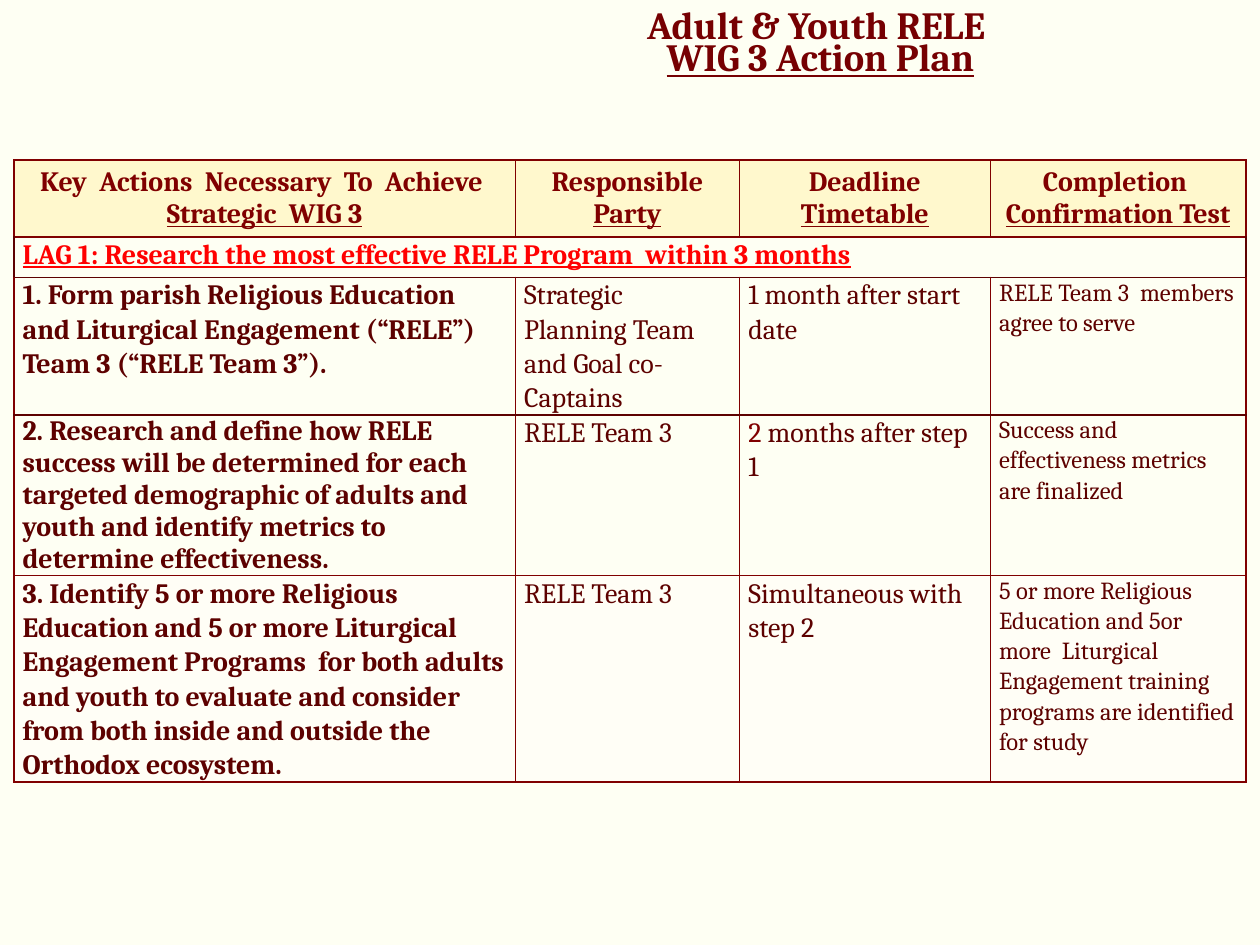
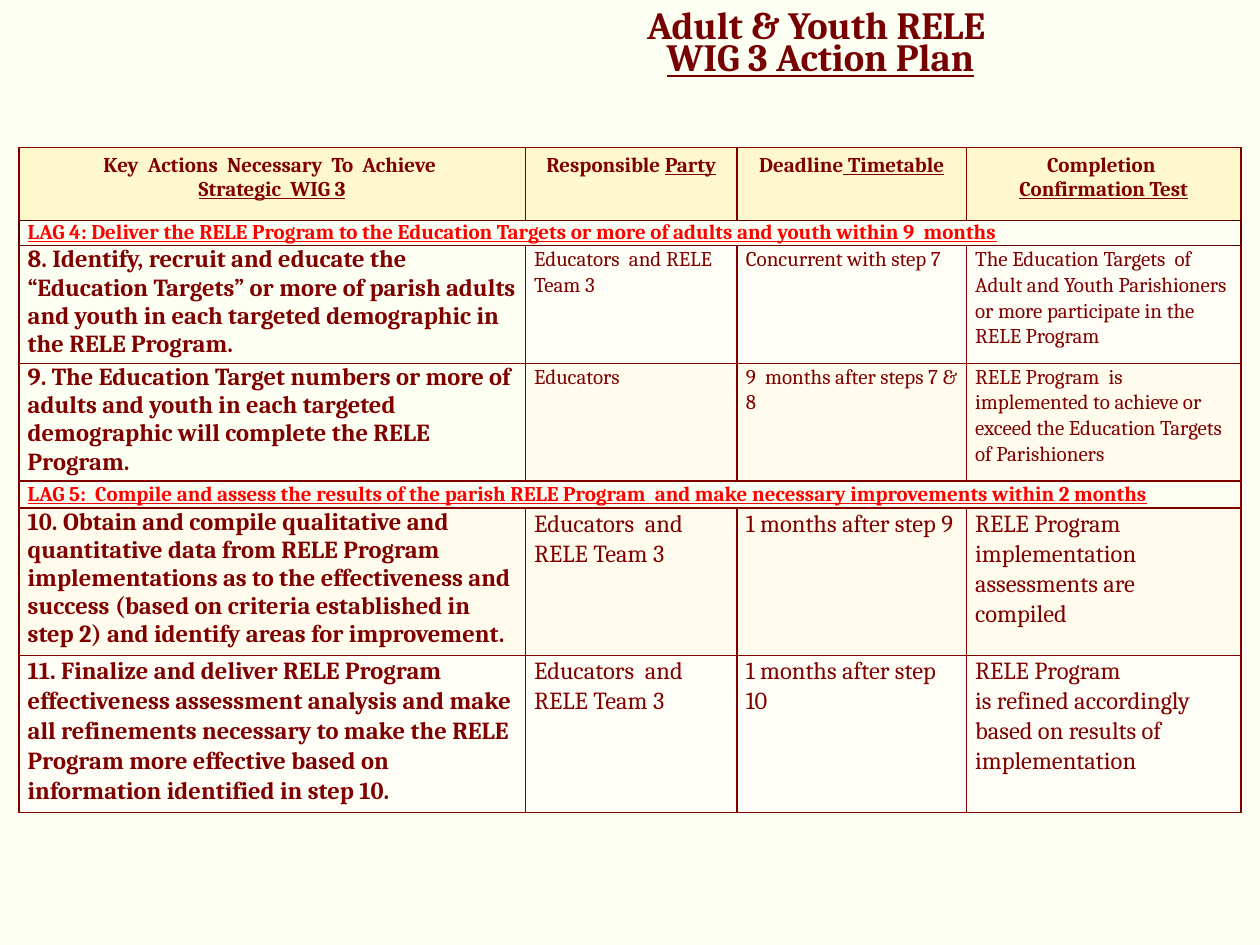
from dataclasses import dataclass

from lxml import etree
from pptx import Presentation, util as u
from pptx.dml.color import RGBColor
from pptx.enum import text
from pptx.oxml.ns import qn


@dataclass(frozen=True)
class Theme:
    font: str = "Cambria"
    page: str = "FEFFF3"
    title: str = "760002"
    maroon: str = "800000"
    dark: str = "5D0100"
    red: str = "FF0000"
    header_fill: str = "FFF8CD"
    pale: str = "FFFEF6"
    cream: str = "FFFCED"
    title_size: int = 22
    large: int = 16
    medium: int = 14
    small: int = 12
    line_width: float = 1
    title_spacing: float = 0.7
    loose: float = 1.07


THEME = Theme()
UNDERLINE = {"underline": True}

# A cell is a list of paragraphs, a paragraph is a list of runs,
# and a run is plain text or (text, format).
TITLE = ["Adult & Youth RELE ", ("WIG 3 Action Plan", UNDERLINE)]
KEY_ACTIONS = [["Key  Actions  Necessary  To  Achieve "], [("Strategic  WIG 3", UNDERLINE)]]
PARTY = [["Responsible ", ("Party", UNDERLINE)]]
COMPLETION = [["Completion "], [("Confirmation Test", UNDERLINE)]]


def header(deadline, size, **options):
    return dict(kind="header", cells=[KEY_ACTIONS, PARTY, [deadline], COMPLETION],
                sizes=[size] * 4, fill=THEME.header_fill, **options)


def lag(words, size, **options):
    """Row that spans the whole table and names a LAG measure."""
    return dict(kind="lag", cells=[[[words]]], sizes=[size], **options)


def step(cells, sizes, **options):
    cells = [[[cell]] if isinstance(cell, str) else cell for cell in cells]
    return dict(kind="step", cells=cells, sizes=sizes, **options)


L, M, S = THEME.large, THEME.medium, THEME.small

PLANS = [
    dict(
        left=0.11, top=1.27, columns=[3.98, 1.78, 1.99, 2.03], ink=THEME.dark,
        rows=[
            header(["Deadline ", ("Timetable", UNDERLINE)], L, height=0.61),
            lag("LAG 1: Research the most effective RELE Program  within 3 months", L,
                height=0.32, below=THEME.dark, sides=THEME.dark),
            step(["1. Form parish Religious Education and Liturgical Engagement (“RELE”) "
                  "Team 3 (“RELE Team 3”).",
                  "Strategic Planning Team and Goal co-Captains",
                  "1 month after start date",
                  "RELE Team 3  members agree to serve"],
                 [L, L, L, M], height=1.09, below=THEME.dark),
            step(["2. Research and define how RELE success will be determined for each "
                  "targeted demographic of adults and youth and identify metrics to "
                  "determine effectiveness.",
                  "RELE Team 3",
                  [[("2 ", {"color": THEME.maroon}), "months after step 1"]],
                  "Success and effectiveness metrics are finalized"],
                 [L, L, L, M], height=1.27, tight=True),
            step(["3. Identify 5 or more Religious Education and 5 or more Liturgical "
                  "Engagement Programs  for both adults and youth to evaluate and consider "
                  "from both inside and outside the Orthodox ecosystem.",
                  "RELE Team 3",
                  "Simultaneous with step 2",
                  "5 or more Religious Education and 5or more  Liturgical Engagement "
                  "training programs are identified for study"],
                 [L, L, L, M], height=1.64, fill=THEME.pale, first_fill=THEME.pale),
        ],
    ),
    dict(
        left=0.15, top=1.17, columns=[4.02, 1.68, 1.82, 2.18], ink=THEME.maroon,
        rows=[
            header(["Deadline", (" Timetable", UNDERLINE)], S, height=0.58,
                   below=THEME.dark),
            lag("LAG 4: Deliver the RELE Program to the Education Targets or more of adults "
                "and youth within 9  months", S, height=0.19, tight=True,
                below=THEME.dark, sides=THEME.dark),
            step(["8. Identify, recruit and educate the “Education Targets” or more of "
                  "parish adults and youth in each targeted demographic in the RELE Program.",
                  "Educators  and RELE Team 3",
                  "Concurrent with step 7",
                  "The Education Targets  of Adult and Youth Parishioners  or more "
                  "participate in the RELE Program"],
                 [M, S, S, S], height=0.9, tight=True, fill=THEME.pale),
            step(["9. The Education Target numbers or more of adults and youth in each "
                  "targeted demographic will complete the RELE Program.",
                  "Educators",
                  "9  months after steps 7 & 8",
                  "RELE Program  is implemented to achieve or exceed the Education Targets  "
                  "of Parishioners"],
                 [M, S, S, S], height=0.9, tight=True, fill=THEME.cream),
            lag("LAG 5:  Compile and assess the results of the parish RELE Program  and make "
                "necessary improvements within 2 months", S, height=0.2),
            step(["10. Obtain and compile qualitative and quantitative data from RELE Program "
                  "implementations as to the effectiveness and success (based on criteria "
                  "established in step 2) and identify areas for improvement.",
                  "Educators  and RELE Team 3",
                  "1 months after step 9",
                  [["RELE Program"], ["implementation  assessments are compiled"]]],
                 [M] * 4, height=1.12, tight=True, fill=THEME.cream,
                 first_fill=THEME.cream),
            step(["11. Finalize and deliver RELE Program effectiveness assessment analysis "
                  "and make all refinements necessary to make the RELE Program more effective "
                  "based on information identified in step 10.",
                  "Educators  and RELE Team 3",
                  "1 months after step 10",
                  [["RELE Program"],
                   ["is refined accordingly based on results of implementation"]]],
                 [M] * 4, height=1.19, fill=THEME.pale, first_fill=THEME.pale),
        ],
    ),
]


def add_run(paragraph, words, style):
    run = paragraph.add_run()
    run.text = words
    for name, value in style.items():
        if name == "color":
            run.font.color.rgb = RGBColor.from_string(value)
        else:
            setattr(run.font, name, value)


def write_runs(paragraph, runs, style):
    for run in runs:
        words, changes = (run, {}) if isinstance(run, str) else run
        add_run(paragraph, words, {**style, **changes})


def add_title(slide):
    box = slide.shapes.add_textbox(u.Inches(4.02), u.Inches(-0.26),
                                   u.Inches(4.98), u.Inches(1.25))
    frame = box.text_frame
    frame.word_wrap = True
    frame.vertical_anchor = text.MSO_ANCHOR.MIDDLE
    paragraph = frame.paragraphs[0]
    paragraph.alignment = text.PP_ALIGN.CENTER
    paragraph.line_spacing = THEME.title_spacing
    style = dict(name=THEME.font, size=u.Pt(THEME.title_size), bold=True, color=THEME.title)
    first_line, second_line = TITLE
    write_runs(paragraph, [first_line], style)
    paragraph.add_line_break()
    write_runs(paragraph, [second_line], style)


def set_borders(cell, sides, above, below):
    properties = cell._tc.get_or_add_tcPr()
    edges = {"a:lnL": sides, "a:lnR": sides, "a:lnT": above, "a:lnB": below}
    for position, (tag, color) in enumerate(edges.items()):
        line = etree.Element(qn(tag), w=str(u.Pt(THEME.line_width)))
        fill = etree.SubElement(line, qn("a:solidFill"))
        etree.SubElement(fill, qn("a:srgbClr"), val=color)
        properties.insert(position, line)


def set_fill(cell, color):
    if color:
        cell.fill.solid()
        cell.fill.fore_color.rgb = RGBColor.from_string(color)
    else:
        cell.fill.background()


def write_cell(cell, row, column, ink):
    kind = row["kind"]
    style = dict(name=THEME.font, size=u.Pt(row["sizes"][column]),
                 bold=kind != "step" or column == 0, underline=kind == "lag",
                 color={"header": THEME.maroon, "lag": THEME.red, "step": ink}[kind])
    tight = kind == "header" or (row.get("tight") and column == 0)
    if kind != "header":
        margins = dict(margin_left=0.07, margin_right=0.07, margin_top=0, margin_bottom=0)
        for name, value in margins.items():
            setattr(cell, name, u.Inches(value))
    frame = cell.text_frame
    for index, runs in enumerate(row["cells"][column]):
        paragraph = frame.add_paragraph() if index else frame.paragraphs[0]
        paragraph.line_spacing = 1.0 if tight else THEME.loose
        if kind == "header":
            paragraph.alignment = text.PP_ALIGN.CENTER
        write_runs(paragraph, runs, style)


def add_plan_table(slide, plan):
    rows, columns = plan["rows"], plan["columns"]
    table = slide.shapes.add_table(
        len(rows), len(columns), u.Inches(plan["left"]), u.Inches(plan["top"]),
        u.Inches(sum(columns)), u.Inches(sum(row["height"] for row in rows))).table
    table.first_row = table.horz_banding = False
    for column, width in zip(table.columns, columns):
        column.width = u.Inches(width)
    above = THEME.maroon
    for index, row in enumerate(rows):
        table.rows[index].height = u.Inches(row["height"])
        below = row.get("below", THEME.maroon)
        if row["kind"] == "lag":
            table.cell(index, 0).merge(table.cell(index, len(columns) - 1))
        for column in range(len(columns)):
            cell = table.cell(index, column)
            fill = row.get("fill")
            if row["kind"] == "step" and column == 0:
                fill = row.get("first_fill")
            set_fill(cell, fill)
            set_borders(cell, row.get("sides", THEME.maroon), above, below)
            if column < len(row["cells"]):
                write_cell(cell, row, column, plan["ink"])
        above = below


def main():
    presentation = Presentation()
    presentation.slide_width, presentation.slide_height = u.Inches(10), u.Inches(7.5)
    for plan in PLANS:
        slide = presentation.slides.add_slide(presentation.slide_layouts[6])
        background = slide.background.fill
        background.solid()
        background.fore_color.rgb = RGBColor.from_string(THEME.page)
        add_plan_table(slide, plan)
        add_title(slide)
    presentation.save("out.pptx")


if __name__ == "__main__":
    main()
